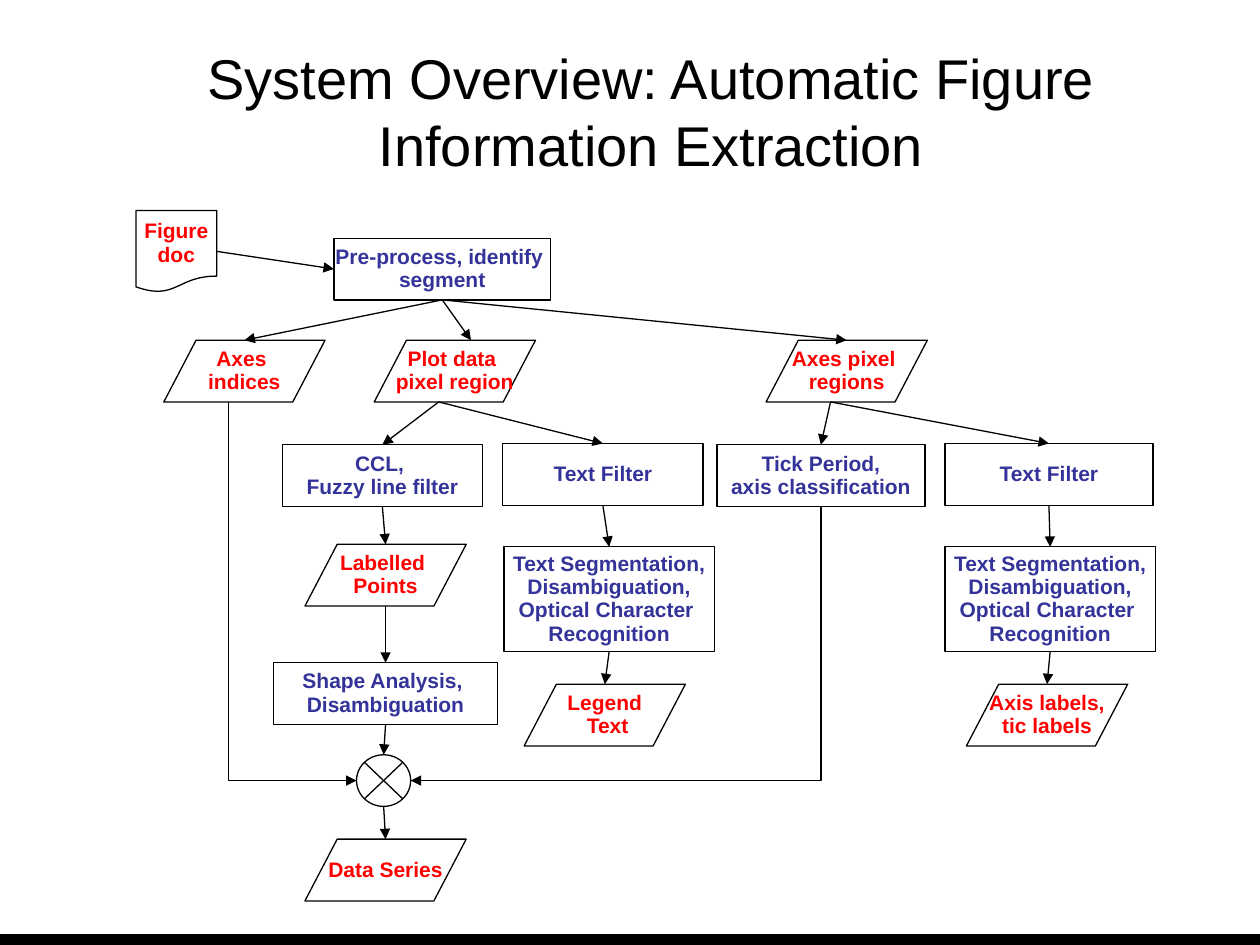
import pptx
import pptx.util
import pptx.dml.color
import pptx.enum.shapes
import pptx.enum.text
import pptx.oxml.ns
import lxml.etree

Inches, Pt = pptx.util.Inches, pptx.util.Pt
RGB = pptx.dml.color.RGBColor
KIND = pptx.enum.shapes.MSO_SHAPE
LINK = pptx.enum.shapes.MSO_CONNECTOR
MIDDLE = pptx.enum.text.MSO_ANCHOR.MIDDLE
CENTER = pptx.enum.text.PP_ALIGN.CENTER
qn = pptx.oxml.ns.qn

BLACK, RED, BLUE = RGB(0, 0, 0), RGB(0xFF, 0, 0), RGB(0x33, 0x33, 0x99)
FONT = "Arial"
LOW = 0.49  # height of a one- or two-line node
SEGMENT = "Text Segmentation,\nDisambiguation,\nOptical Character \nRecognition"

DOC, STEP = KIND.FLOWCHART_DOCUMENT, KIND.FLOWCHART_PROCESS
DATA, JOIN = KIND.FLOWCHART_DATA, KIND.FLOWCHART_SUMMING_JUNCTION

# name: kind, left, top, width, height (inches inside the chart box), text
NODES = {
    "doc": (DOC, 0, 0, 0.64, 0.65, "Figure\ndoc"),
    "prep": (STEP, 1.57, 0.22, 1.72, LOW, "Pre-process, identify \nsegment"),
    "axes": (DATA, 0.22, 1.03, 1.28, LOW, "Axes \nindices"),
    "plot": (DATA, 1.89, 1.03, 1.28, LOW, "Plot data \npixel region"),
    "pixel": (DATA, 5, 1.03, 1.28, LOW, "Axes pixel \nregions"),
    "ccl": (STEP, 1.16, 1.86, 1.59, LOW, "CCL, \nFuzzy line filter"),
    "filter": (STEP, 2.91, 1.85, 1.59, LOW, "Text Filter"),
    "tick": (STEP, 4.61, 1.86, 1.65, LOW, "Tick Period,\naxis classification"),
    "filter2": (STEP, 6.42, 1.85, 1.65, LOW, "Text Filter"),
    "points": (DATA, 1.34, 2.65, 1.28, LOW, "Labelled \nPoints"),
    "seg": (STEP, 2.92, 2.67, 1.67, 0.83, SEGMENT),
    "seg2": (STEP, 6.42, 2.67, 1.67, 0.83, SEGMENT),
    "shape": (STEP, 1.09, 3.59, 1.78, LOW, "Shape Analysis, \nDisambiguation"),
    "legend": (DATA, 3.08, 3.76, 1.28, LOW, "Legend\n Text"),
    "labels": (DATA, 6.59, 3.76, 1.28, LOW, "Axis labels,\ntic labels"),
    "sum": (JOIN, 1.75, 4.32, 0.43, 0.41, ""),
    "series": (DATA, 1.34, 4.99, 1.28, LOW, "Data Series"),
}

# Points on a node, as shares of its width and height
TOP, BOTTOM, LEFT, RIGHT = (0.5, 0), (0.5, 1), (0, 0.5), (1, 0.5)
SKEW_TOP, SKEW_BOTTOM = (0.6, 0), (0.4, 1)

# from, its point, to, its point
ARROWS = [
    ("doc", RIGHT, "prep", LEFT),
    ("prep", BOTTOM, "axes", TOP),
    ("prep", BOTTOM, "plot", SKEW_TOP),
    ("prep", BOTTOM, "pixel", TOP),
    ("plot", SKEW_BOTTOM, "ccl", TOP),
    ("plot", SKEW_BOTTOM, "filter", TOP),
    ("pixel", SKEW_BOTTOM, "tick", TOP),
    ("pixel", SKEW_BOTTOM, "filter2", TOP),
]
CHAINS = [
    ("ccl", "points", "shape", "sum", "series"),
    ("filter", "seg", "legend"),
    ("filter2", "seg2", "labels"),
]
BENDS = [("axes", SKEW_BOTTOM, "sum", LEFT), ("tick", BOTTOM, "sum", RIGHT)]


def style(para, size, color, bold=False):
    para.alignment = CENTER
    for run in para.runs:
        font = run.font
        font.name, font.size, font.bold = FONT, Pt(size), bold
        font.color.rgb = color


def add_title(slide, left, top, width, height):
    title = slide.shapes.title
    title.left, title.top, title.width, title.height = left, top, width, height
    frame = title.text_frame
    frame.text = "System Overview: Automatic Figure Information Extraction"
    frame.vertical_anchor = MIDDLE
    style(frame.paragraphs[0], 32, BLACK)


def add_bar(slide, left, top, width, height):
    bar = slide.shapes.add_shape(KIND.RECTANGLE, left, top, width, height)
    bar.shadow.inherit = False
    bar.fill.solid()
    bar.fill.fore_color.rgb = bar.line.color.rgb = BLACK
    bar.line.width = Pt(0.75)


def add_node(slide, kind, left, top, width, height, text):
    node = slide.shapes.add_shape(kind, left, top, width, height)
    node.shadow.inherit = False
    node.fill.background()
    node.line.color.rgb = BLACK
    node.line.width = Pt(0.75)
    if text:
        frame = node.text_frame
        frame.text = text
        frame.word_wrap = False
        frame.vertical_anchor = MIDDLE
        for para in frame.paragraphs:
            para.line_spacing = 0.93
            style(para, 12, BLUE if kind == STEP else RED, True)
    return node


def spot(node, share):
    return (int(node.left + node.width * share[0]),
            int(node.top + node.height * share[1]))


def add_arrow(slide, start, end, kind=LINK.STRAIGHT):
    arrow = slide.shapes.add_connector(kind, *start, *end)
    arrow.line.color.rgb = BLACK
    arrow.line.width = Pt(0.75)
    props = arrow._element.spPr
    lxml.etree.SubElement(props.find(qn("a:ln")), qn("a:tailEnd"), type="triangle")
    lxml.etree.SubElement(props, qn("a:effectLst"))
    return arrow


def add_bend(slide, start, end):
    """Arrow that runs down first, then sideways: a turned one-corner elbow."""
    arrow = add_arrow(slide, start, end, LINK.ELBOW)
    across, down = abs(end[0] - start[0]), abs(end[1] - start[1])
    arrow.left = (start[0] + end[0] - down) // 2
    arrow.top = (start[1] + end[1] - across) // 2
    arrow.width, arrow.height = down, across
    props = arrow._element.spPr
    props.find(qn("a:prstGeom")).set("prst", "bentConnector2")
    frame = props.find(qn("a:xfrm"))
    frame.attrib.pop("flipH", None)
    if end[0] > start[0]:
        frame.set("rot", str(270 * 60000))
        frame.set("flipH", "1")
    else:
        frame.set("rot", str(90 * 60000))


def add_flow(slide, left, top):
    # Nodes
    nodes = {}
    for name, (kind, x, y, width, height, text) in NODES.items():
        nodes[name] = add_node(slide, kind, left + Inches(x), top + Inches(y),
                               Inches(width), Inches(height), text)
    # Straight arrows
    steps = [(a, BOTTOM, b, TOP) for chain in CHAINS
             for a, b in zip(chain, chain[1:])]
    for a, out, b, into in ARROWS + steps:
        add_arrow(slide, spot(nodes[a], out), spot(nodes[b], into))
    # Arrows with a corner
    for a, out, b, into in BENDS:
        add_bend(slide, spot(nodes[a], out), spot(nodes[b], into))


def main():
    deck = pptx.Presentation()
    deck.slide_width, deck.slide_height = Inches(10), Inches(7.5)
    slide = deck.slides.add_slide(deck.slide_layouts[5])
    add_bar(slide, 0, Inches(7.42), deck.slide_width, Inches(0.08))
    add_title(slide, Inches(0.92), Inches(0.25), Inches(8.5), Inches(1.25))
    add_flow(slide, Inches(1.08), Inches(1.67))
    deck.save("out.pptx")


if __name__ == "__main__":
    main()
